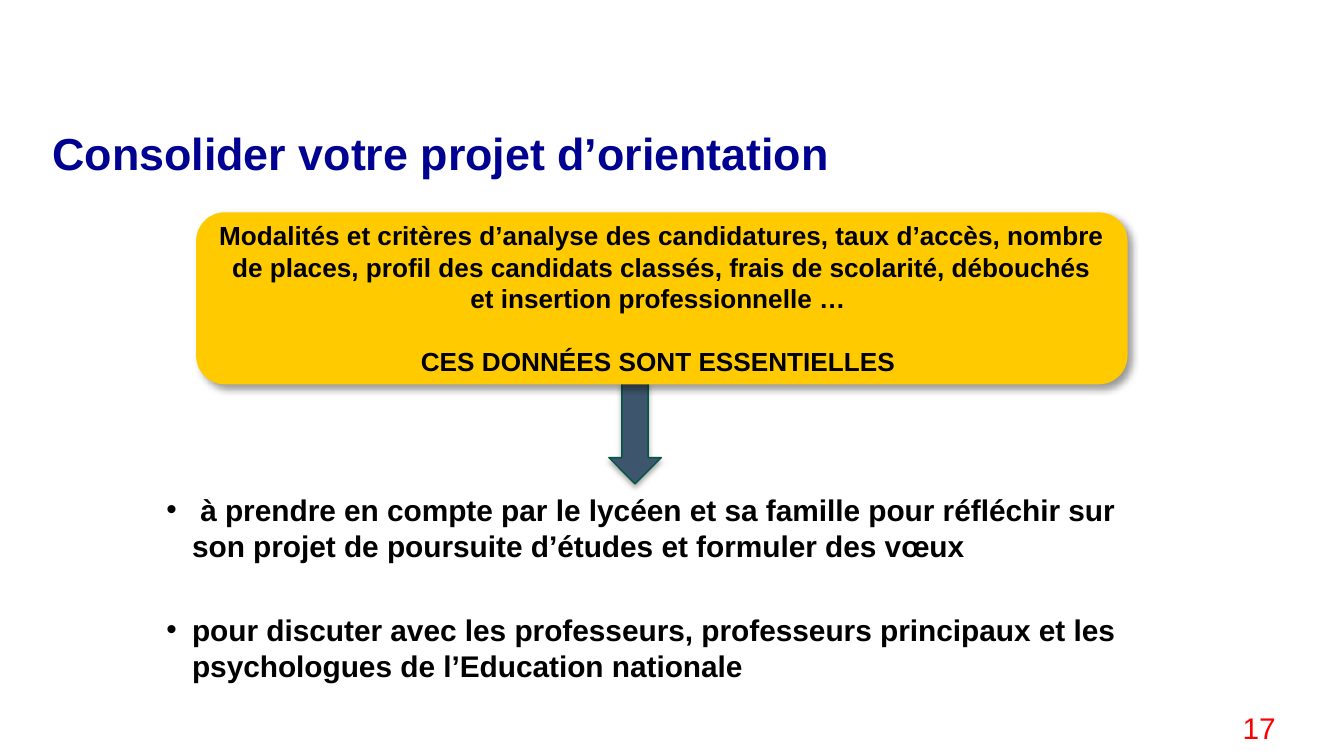
import pptx
import pptx.util
import pptx.dml.color
import pptx.enum.shapes
import pptx.enum.text
import pptx.oxml.ns
import lxml.etree

Inches = pptx.util.Inches
Pt = pptx.util.Pt
Align = pptx.enum.text.PP_ALIGN
Anchor = pptx.enum.text.MSO_ANCHOR
Shape = pptx.enum.shapes.MSO_SHAPE

TITLE = "Consolider votre projet d’orientation"
FACTS = [
    "Modalités et critères d’analyse des candidatures, taux d’accès, nombre de places, "
    "profil des candidats classés, frais de scolarité, débouchés et insertion professionnelle … ",
    "CES DONNÉES SONT ESSENTIELLES ",
]
USES = [
    " à prendre en compte par le lycéen et sa famille pour réfléchir sur son projet "
    "de poursuite d’études et formuler des vœux",
    "pour discuter avec les professeurs, professeurs principaux et les psychologues "
    "de l’Education nationale",
]
PAGE = "17"

THEME = {
    "font": "Arial",
    "title": {"size": 24, "color": "000091", "bold": True},
    "page": {"size": 16, "color": "FF0000", "bold": False},
    "uses": {"size": 16, "color": "000000", "bold": True},
    "facts": {"size": 14, "color": "000000", "bold": True},
    "arrow": "3D566E",
    "edge": "005640",
    "box": "FFCA00",
}
SPOTS = {
    "title": (0.39, 0.98, 9.21, 0.79),
    "page": (8.31, 5.23, 1.28, 0.39),
    "uses": (1.14, 3.61, 7.48, 1.56),
    "arrow": (4.53, 2.85, 0.39, 0.75),
    "box": (1.46, 1.58, 6.93, 1.28),
}
SHADES = {
    "arrow": {"alpha": 35, "blur": 3.1, "dist": 1.8, "angle": 90},
    "box": {"alpha": 40, "blur": 4, "dist": 3, "angle": 45},
}


def spot(name):
    return [Inches(n) for n in SPOTS[name]]


def tint(code):
    return pptx.dml.color.RGBColor.from_string(code)


def apply(item, form):
    for key, value in form.items():
        setattr(item, key, value)


def add_node(parent, tag, **attrs):
    return lxml.etree.SubElement(parent, pptx.oxml.ns.qn(tag), attrs)


def write(frame, texts, style, form, gap=0, bullet=None):
    look = THEME[style]
    apply(frame, {"word_wrap": True, "auto_size": pptx.enum.text.MSO_AUTO_SIZE.NONE})
    for i, text in enumerate(texts):
        para = frame.add_paragraph() if i else frame.paragraphs[0]
        if bullet:
            props = para._p.get_or_add_pPr()
            props.set("marL", str(Inches(0.19)))
            props.set("indent", str(Inches(-0.19)))
            add_node(props, "a:buFont", typeface=THEME["font"])
            add_node(props, "a:buChar", char=bullet)
        apply(para, form)
        if i:
            para.space_before = Pt(gap)
        run = para.add_run()
        run.text = text
        apply(run.font, {"name": THEME["font"], "size": Pt(look["size"]), "bold": look["bold"]})
        run.font.color.rgb = tint(look["color"])


def add_form(slide, kind, name):
    shape = slide.shapes.add_shape(kind, *spot(name))
    shape.fill.solid()
    shape.fill.fore_color.rgb = tint(THEME[name])
    shape.line.fill.background()
    shape.shadow.inherit = False
    shade = SHADES[name]
    effects = shape._element.spPr.find(pptx.oxml.ns.qn("a:effectLst"))
    outer = add_node(effects, "a:outerShdw", blurRad=str(Pt(shade["blur"])),
                     dist=str(Pt(shade["dist"])), dir=str(shade["angle"] * 60000),
                     algn="ctr", rotWithShape="0")
    color = add_node(outer, "a:srgbClr", val="000000")
    add_node(color, "a:alpha", val=str(shade["alpha"] * 1000))
    return shape


def main():
    deck = pptx.Presentation()
    wide = Inches(10)
    apply(deck, {"slide_width": wide, "slide_height": wide * 9 // 16})
    slide = deck.slides.add_slide(deck.slide_layouts[5])

    title = slide.shapes.title
    apply(title, dict(zip(("left", "top", "width", "height"), spot("title"))))
    frame = title.text_frame
    apply(frame, {"margin_left": 0, "margin_top": 0, "margin_right": 0, "margin_bottom": 0,
                  "vertical_anchor": Anchor.TOP})
    write(frame, [TITLE], "title", {"alignment": Align.LEFT, "line_spacing": 0.9})

    page = slide.shapes.add_textbox(*spot("page"))
    write(page.text_frame, [PAGE], "page", {"alignment": Align.RIGHT})

    uses = slide.shapes.add_textbox(*spot("uses"))
    write(uses.text_frame, USES, "uses", {"alignment": Align.LEFT}, gap=26, bullet="•")

    arrow = add_form(slide, Shape.DOWN_ARROW, "arrow")
    arrow.line.color.rgb = tint(THEME["edge"])
    arrow.line.width = Pt(0.75)

    box = add_form(slide, Shape.ROUNDED_RECTANGLE, "box")
    box.text_frame.vertical_anchor = Anchor.MIDDLE
    write(box.text_frame, FACTS, "facts", {"alignment": Align.CENTER}, gap=17)

    deck.save("out.pptx")


if __name__ == "__main__":
    main()
